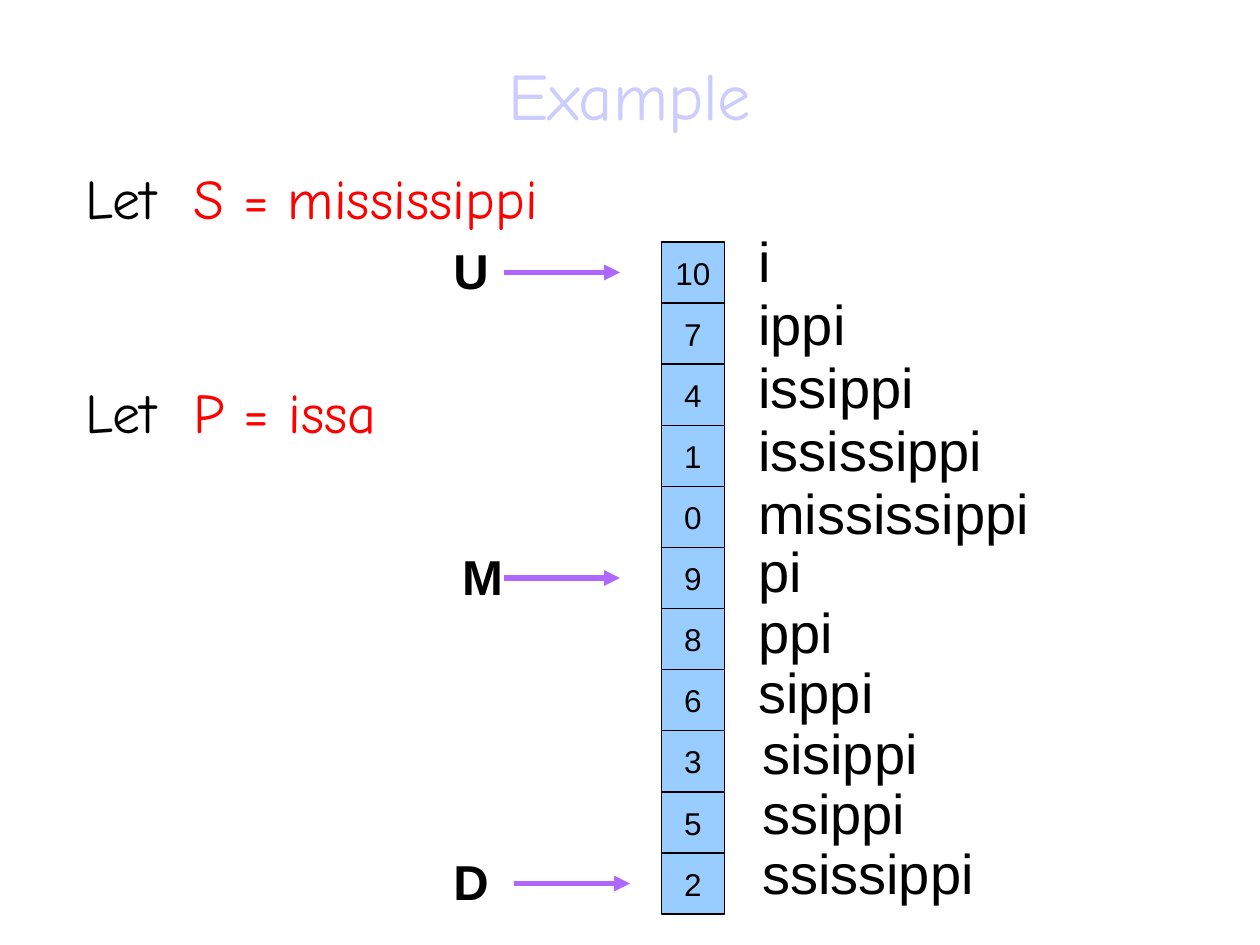
"""Build a slide showing a binary search over the suffix array of mississippi."""
from dataclasses import dataclass

from lxml.etree import SubElement
from pptx import Presentation
from pptx.dml.color import RGBColor
from pptx.enum.shapes import MSO_CONNECTOR, MSO_SHAPE
from pptx.enum.text import MSO_ANCHOR, PP_ALIGN
from pptx.oxml.ns import qn
from pptx.util import Inches, Pt

TITLE = "Example"
DEFINITIONS = [("Let", "S = mississippi", 1.25), ("Let", "P = issa", 2.95)]
SUFFIXES = [
    (10, "i"), (7, "ippi"), (4, "issippi"), (1, "ississippi"),
    (0, "mississippi"), (9, "pi"), (8, "ppi"), (6, "sippi"),
    (3, "sisippi"), (5, "ssippi"), (2, "ssissippi"),
]
MARKERS = [("U", 0, 3.5, 4), ("M", 5, 3.57, 4), ("D", 10, 3.5, 4.08)]


@dataclass(frozen=True)
class Theme:
    """Colours, fonts and type sizes."""
    ink: str = "000000"
    title: str = "CCCCFF"
    accent: str = "FF0000"
    cell: str = "99CCFF"
    arrow: str = "AF67FF"
    display: str = "Comic Neue"
    body: str = "Arial"
    title_size: int = 38
    text_size: int = 32
    marker_size: int = 28
    cell_size: int = 18


THEME = Theme()
WIDTH, HEIGHT = 10, 7.5
ARRAY_LEFT, ARRAY_TOP, CELL_WIDTH, CELL_HEIGHT = 5.25, 1.92, 0.5, 0.485
TEXT_HEIGHT, MARKER_WIDTH, MARKER_HEIGHT = 0.63, 0.58, 0.57
ARROW_LENGTH = 0.92
TAB_STOP = 0.86


def color(value):
    return RGBColor.from_string(value)


def style(paragraph, size, name=THEME.body, ink=THEME.ink, bold=False):
    font = paragraph.font
    font.name, font.size, font.bold = name, Pt(size), bold
    font.color.rgb = color(ink)


def add_text(slide, box, text=""):
    frame = slide.shapes.add_textbox(*map(Inches, box)).text_frame
    frame.word_wrap = True
    frame.text = text
    return frame


def add_title(slide):
    frame = add_text(slide, (0.5, 0.17, WIDTH - 1, 1.25), TITLE)
    frame.vertical_anchor = MSO_ANCHOR.MIDDLE
    paragraph = frame.paragraphs[0]
    paragraph.alignment, paragraph.line_spacing = PP_ALIGN.CENTER, 0.85
    style(paragraph, THEME.title_size, THEME.display, THEME.title)


def add_definition(slide, keyword, formula, top):
    paragraph = add_text(slide, (0.58, top, 4.67, TEXT_HEIGHT)).paragraphs[0]
    tabs = SubElement(paragraph._p.get_or_add_pPr(), qn("a:tabLst"))
    SubElement(tabs, qn("a:tab"), pos=str(Inches(TAB_STOP)), algn="l")
    style(paragraph, THEME.text_size, THEME.display)
    for text, ink in ((keyword + "\t", THEME.ink), (formula, THEME.accent)):
        run = paragraph.add_run()
        run.text = text
        run.font.color.rgb = color(ink)


def add_cell(group, row, value):
    box = (ARRAY_LEFT, ARRAY_TOP + row * CELL_HEIGHT, CELL_WIDTH, CELL_HEIGHT)
    shape = group.shapes.add_shape(MSO_SHAPE.RECTANGLE, *map(Inches, box))
    shape.shadow.inherit = False
    shape.fill.solid()
    shape.fill.fore_color.rgb = color(THEME.cell)
    shape.line.color.rgb = color(THEME.ink)
    shape.line.width = Pt(0.75)
    frame = shape.text_frame
    frame.text, frame.word_wrap = str(value), False
    frame.vertical_anchor = MSO_ANCHOR.MIDDLE
    frame.paragraphs[0].alignment = PP_ALIGN.CENTER
    style(frame.paragraphs[0], THEME.cell_size)


def add_suffix(slide, row, suffix):
    left = 5.92 if row < 8 else 5.95
    top = 1.75 + 0.5 * row if row < 5 else 4.21 + 0.48 * (row - 5)
    frame = add_text(slide, (left, top, 3.75, TEXT_HEIGHT), suffix)
    style(frame.paragraphs[0], THEME.text_size)


def add_marker(slide, label, row, label_left, arrow_left):
    middle = ARRAY_TOP + (row + 0.5) * CELL_HEIGHT
    box = (label_left, middle - 0.3, MARKER_WIDTH, MARKER_HEIGHT)
    frame = add_text(slide, box, label)
    style(frame.paragraphs[0], THEME.marker_size, bold=True)
    ends = (arrow_left, middle, arrow_left + ARROW_LENGTH, middle)
    arrow = slide.shapes.add_connector(MSO_CONNECTOR.STRAIGHT, *map(Inches, ends))
    arrow.line.color.rgb = color(THEME.arrow)
    arrow.line.width = Pt(3)
    SubElement(arrow.line._get_or_add_ln(), qn("a:tailEnd"), type="triangle")
    SubElement(arrow._element.spPr, qn("a:effectLst"))


def main():
    presentation = Presentation()
    presentation.slide_width, presentation.slide_height = Inches(WIDTH), Inches(HEIGHT)
    slide = presentation.slides.add_slide(presentation.slide_layouts[6])
    add_title(slide)
    for definition in DEFINITIONS:
        add_definition(slide, *definition)
    suffix_array = slide.shapes.add_group_shape()
    for row, (start, suffix) in enumerate(SUFFIXES):
        add_cell(suffix_array, row, start)
        add_suffix(slide, row, suffix)
    for marker in MARKERS:
        add_marker(slide, *marker)
    presentation.save("out.pptx")


if __name__ == "__main__":
    main()
